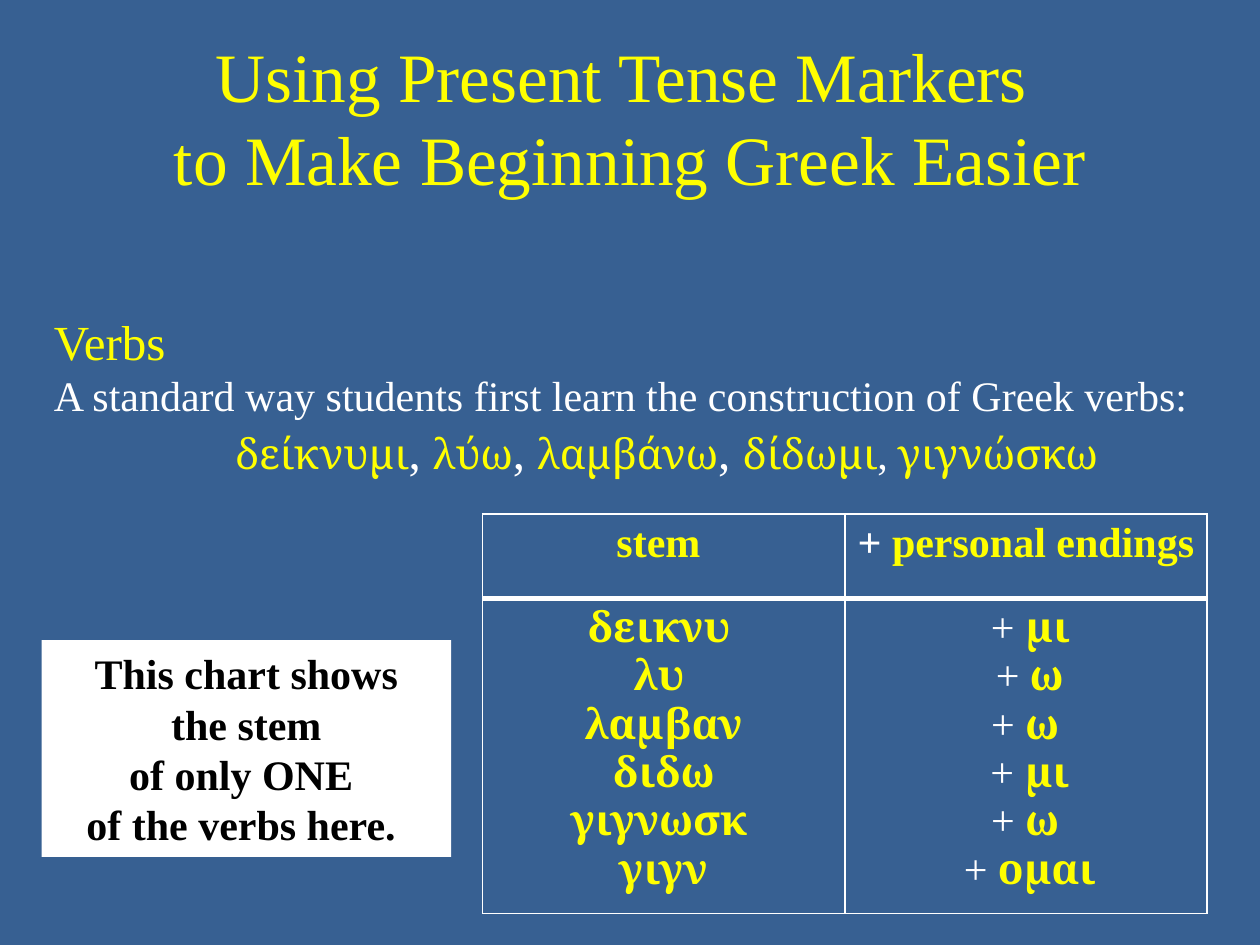
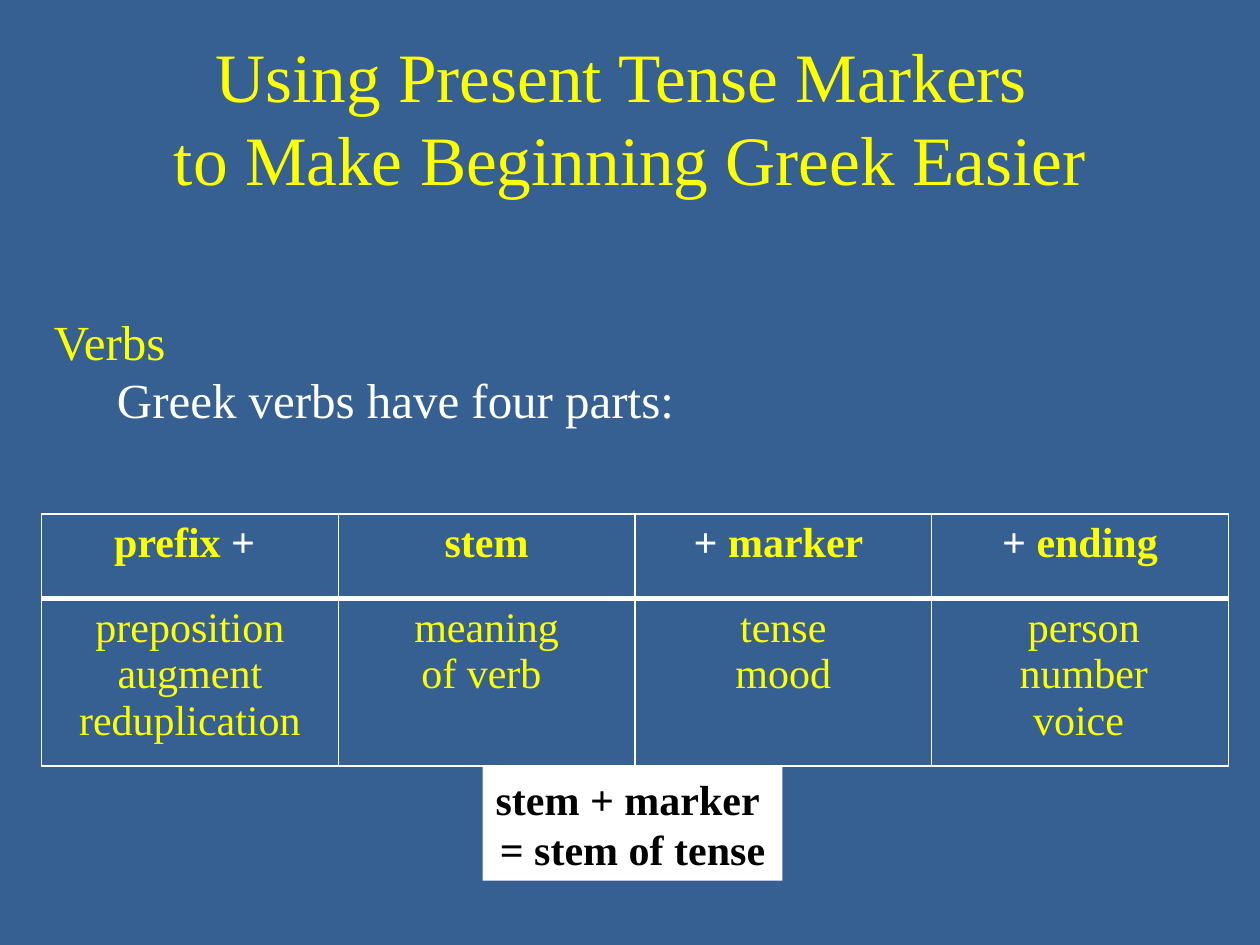
import pptx
import pptx.dml.color
import pptx.enum.shapes
import pptx.enum.text
import pptx.oxml
import pptx.util
from pptx.util import Inches

COLORS = {"blue": "376092", "yellow": "FFFF00", "white": "FFFFFF", "black": "000000"}
LATIN, GREEK = "Times New Roman", "Cambria"
CENTER = pptx.enum.text.PP_ALIGN.CENTER
LEFT = pptx.enum.text.PP_ALIGN.LEFT
MIDDLE = pptx.enum.text.MSO_ANCHOR.MIDDLE
GROW = pptx.enum.text.MSO_AUTO_SIZE.SHAPE_TO_FIT_TEXT

# Each style: font name, size, colour, bold
STYLES = {
    "title": (LATIN, 39.6, "yellow", False),
    "heading": (LATIN, 28, "yellow", False),
    "lead": (LATIN, 28, "white", False),
    "plain": (LATIN, 24, "white", False),
    "part": (LATIN, 24, "yellow", False),
    "head": (LATIN, 24, "yellow", True),
    "plus": (LATIN, 24, "white", True),
    "greek": (GREEK, 24, "yellow", False),
    "greek_bold": (GREEK, 24, "yellow", True),
    "note": (LATIN, 24, "black", True),
}
TITLE = "Using Present Tense Markers \vto Make Beginning Greek Easier"
TITLE_BOX = (0.5, 0.3, 9, 1.25)
EDGE, TABLE_TOP, INTRO_TOP, FULL_WIDTH = 0.33, 4.08, 2.42, 9.42
HEADER_HEIGHT = 0.67
ENDING_INDENT = 0.06


def rgb(name):
    return pptx.dml.color.RGBColor.from_string(COLORS[name])


def inches(box):
    return [Inches(value) for value in box]


def lines(style, *texts):
    """One single-span paragraph for each text."""
    return [[(text, style)] for text in texts]


def add_span(para, text, style):
    name, size, color, bold = STYLES[style]
    for number, piece in enumerate(text.split("\v")):
        if number:
            para.add_line_break()
        span = para.add_run()
        span.text = piece
        values = {"name": name, "size": pptx.util.Pt(size), "bold": bold}
        for key, value in values.items():
            setattr(span.font, key, value)
        span.font.color.rgb = rgb(color)


def write(frame, paragraphs, align=CENTER, indent=0):
    for number, spans in enumerate(paragraphs):
        para = frame.add_paragraph() if number else frame.paragraphs[0]
        format_para(para, align, indent)
        for text, style in spans:
            add_span(para, text, style)


def format_para(para, align, indent):
    para.alignment = align
    if indent:
        properties = para._p.get_or_add_pPr()
        properties.set("marL", str(Inches(indent)))
        properties.set("indent", "0")


def add_page(deck):
    """A blue page with the shared title."""
    page = deck.slides.add_slide(deck.slide_layouts[6])
    page.background.fill.solid()
    page.background.fill.fore_color.rgb = rgb("blue")
    frame = page.shapes.add_textbox(*inches(TITLE_BOX)).text_frame
    frame.word_wrap = True
    frame.vertical_anchor = MIDDLE
    write(frame, lines("title", TITLE))
    return page


def add_intro(page, height, paragraphs, last_align):
    """The Verbs heading and its text; the last paragraph is indented."""
    box = (EDGE, INTRO_TOP, FULL_WIDTH, height)
    frame = page.shapes.add_textbox(*inches(box)).text_frame
    frame.word_wrap = True
    frame.auto_size = GROW
    write(frame, lines("heading", "Verbs") + paragraphs, LEFT)
    format_para(frame.paragraphs[-1], last_align, 0.5)


def add_note(page, box, texts):
    note = page.shapes.add_shape(pptx.enum.shapes.MSO_SHAPE.RECTANGLE, *inches(box))
    note.shadow.inherit = False
    note.fill.solid()
    note.fill.fore_color.rgb = rgb("white")
    note.line.fill.background()
    frame = note.text_frame
    frame.word_wrap = True
    frame.auto_size = GROW
    write(frame, lines("note", *texts))


def set_borders(cell, widths):
    """Draw white cell borders, given as points by side in schema order."""
    properties = cell._tc.get_or_add_tcPr()
    for place, (side, width) in enumerate(widths.items()):
        border = pptx.oxml.parse_xml(
            '<a:ln%s xmlns:a="http://schemas.openxmlformats.org/drawingml/2006/main" w="%d">'
            '<a:solidFill><a:srgbClr val="%s"/></a:solidFill></a:ln%s>'
            % (side, pptx.util.Pt(width), COLORS["white"], side))
        properties.insert(place, border)


def add_parts_table(page, left, width, body_height, headers, bodies):
    """A header row over one body row, with a thick rule between them."""
    count = len(headers)
    box = (left, TABLE_TOP, width, HEADER_HEIGHT + body_height)
    table = page.shapes.add_table(2, count, *inches(box)).table
    table.first_row = table.horz_banding = False
    table.rows[0].height = Inches(HEADER_HEIGHT)
    table.rows[1].height = Inches(body_height)
    for column, (header, body) in enumerate(zip(headers, bodies)):
        table.columns[column].width = Inches(width / count)
        for row, paragraphs in enumerate(([header], body)):
            cell = table.cell(row, column)
            cell.fill.background()
            top, bottom = ((1, 3), (3, 1))[row]
            set_borders(cell, {"L": 1, "R": 1, "T": top, "B": bottom})
            last_body = row == 1 and column == count - 1
            write(cell.text_frame, paragraphs, indent=ENDING_INDENT if last_body else 0)


def build_standard_way(deck):
    page = add_page(deck)
    stems = ["δεικνυ ", "λυ ", "λαμβαν", "διδω", "γιγνωσκ ", "γιγν"]
    endings = ["μι ", "ω", "ω ", "μι", "ω ", "ομαι"]
    ending_lines = [[("+ ", "plain"), (ending, "greek_bold")] for ending in endings]
    ending_lines[0].insert(0, (" ", "plus"))
    add_parts_table(
        page, 3.83, 5.75, 2.4,
        [[("stem ", "head")], [("+ ", "plus"), ("personal endings", "head")]],
        [lines("greek_bold", *stems), ending_lines])
    examples = []
    for verb in ["δείκνυμι", "λύω", "λαμβάνω"]:
        examples += [(verb, "greek"), (", ", "lead")]
    examples += [("δίδωμι", "greek"), (",", "plain"), (" γιγνώσκω", "greek")]
    standard = "A standard way students first learn the construction of Greek verbs:"
    add_intro(page, 1.45, lines("plain", standard) + [examples], CENTER)
    add_note(page, (EDGE, 5.08, 3.25, 1.72),
             ["This chart shows", "the stem", "of only ONE ", "of the verbs here. "])


def build_four_parts(deck):
    page = add_page(deck)
    headers = [
        [("prefix", "head"), (" + ", "plus")],
        [("stem", "head")],
        [("+ ", "plus"), ("marker ", "head")],
        [("+ ", "plus"), ("ending", "head")],
    ]
    bodies = [
        lines("part", "preposition", "augment", "reduplication"),
        lines("part", "meaning", "of verb "),
        lines("part", "tense", "mood"),
        lines("part", "person ", "number", "voice "),
    ]
    bodies[-1][0].insert(0, (" ", "plus"))
    add_parts_table(page, EDGE, FULL_WIDTH, 1.33, headers, bodies)
    add_intro(page, 1.04, lines("lead", "Greek verbs have four parts:"), LEFT)
    add_note(page, (3.83, 6.08, 2.38, 0.91), ["stem + marker ", "= stem of tense"])


def main():
    deck = pptx.Presentation()
    deck.slide_width, deck.slide_height = Inches(10), Inches(7.5)
    build_standard_way(deck)
    build_four_parts(deck)
    deck.save("out.pptx")


if __name__ == "__main__":
    main()
